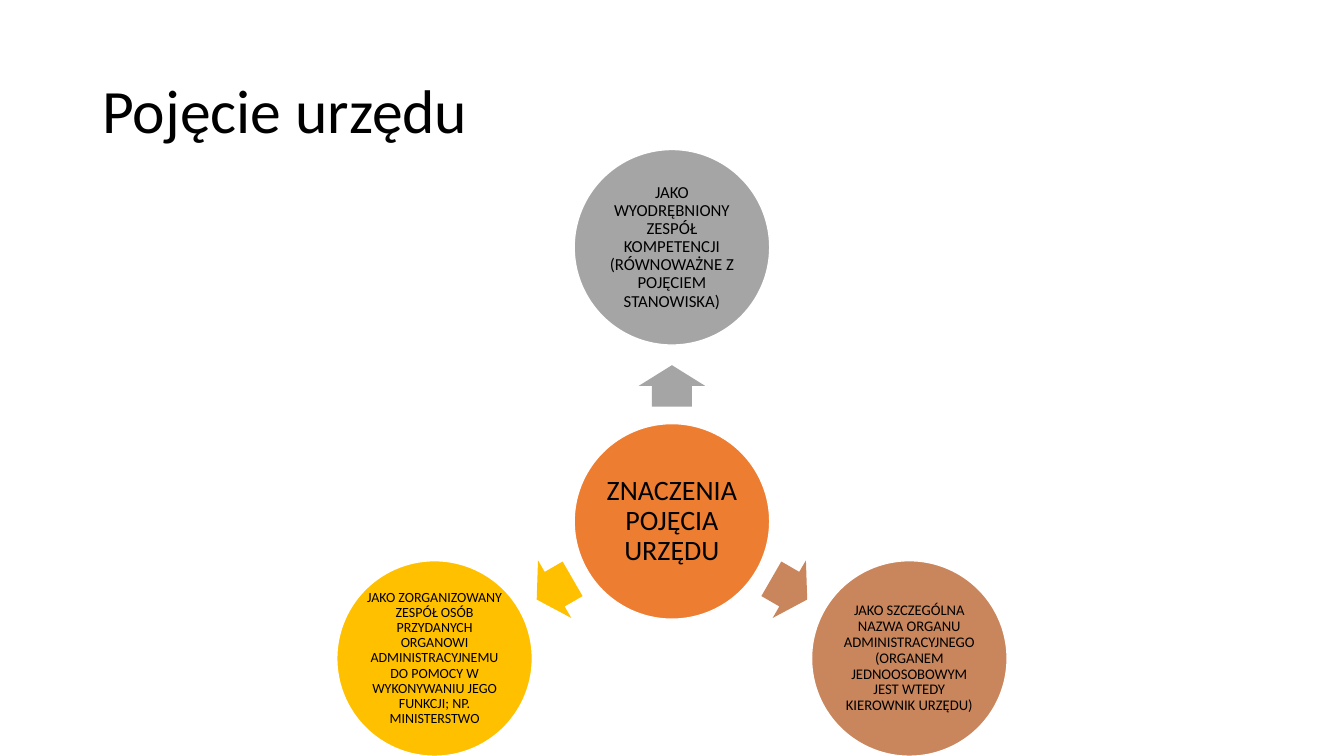
import math

from pptx import Presentation
from pptx.dml.color import RGBColor
from pptx.enum.shapes import MSO_SHAPE
from pptx.enum.text import MSO_ANCHOR, PP_ALIGN
from pptx.util import Pt

ELLIPSE = MSO_SHAPE.OVAL
ARROW = MSO_SHAPE.RIGHT_ARROW
MIDDLE = MSO_ANCHOR.MIDDLE
LEFT = PP_ALIGN.LEFT
CENTER = PP_ALIGN.CENTER

BLACK = RGBColor(0x00, 0x00, 0x00)
WHITE = RGBColor(0xFF, 0xFF, 0xFF)
ORANGE = RGBColor(0xED, 0x7D, 0x31)
GRAY = RGBColor(0xA5, 0xA5, 0xA5)
BROWN = RGBColor(0xC9, 0x85, 0x5C)
YELLOW = RGBColor(0xFF, 0xC0, 0x00)

FONT = "Calibri"
DIAMETER = 139.7
ORBIT = 195.8
ARROW_DISTANCE = 96.8
ARROW_LENGTH = 29.6
ARROW_WIDTH = 47.5

MEANINGS = [
    (-90, GRAY, 12, 1.5,
     "JAKO WYODRĘBNIONY ZESPÓŁ KOMPETENCJI (RÓWNOWAŻNE Z POJĘCIEM STANOWISKA)"),
    (30, BROWN, 10.5, 1.3,
     "JAKO SZCZEGÓLNA NAZWA ORGANU ADMINISTRACYJNEGO "
     "(ORGANEM JEDNOOSOBOWYM JEST WTEDY KIEROWNIK URZĘDU)"),
    (150, YELLOW, 10, 1,
     "JAKO ZORGANIZOWANY ZESPÓŁ OSÓB PRZYDANYCH ORGANOWI ADMINISTRACYJNEMU "
     "DO POMOCY W WYKONYWANIU JEGO FUNKCJI; NP. MINISTERSTWO"),
]


def write_text(shape, text, size, alignment):
    text_frame = shape.text_frame
    text_frame.word_wrap = True
    text_frame.vertical_anchor = MIDDLE
    text_frame.text = text
    paragraph = text_frame.paragraphs[0]
    paragraph.alignment = alignment
    paragraph.line_spacing = 0.9
    font = paragraph.runs[0].font
    font.name = FONT
    font.size = Pt(size)
    font.color.rgb = BLACK


def add_centered_shape(slide, kind, x, y, width, height, color):
    shape = slide.shapes.add_shape(
        kind, Pt(x - width / 2), Pt(y - height / 2), Pt(width), Pt(height))
    shape.shadow.inherit = False
    shape.fill.solid()
    shape.fill.fore_color.rgb = color
    shape.line.fill.background()
    return shape


def add_circle(slide, x, y, color, text, size, inset):
    circle = add_centered_shape(slide, ELLIPSE, x, y, DIAMETER, DIAMETER, color)
    circle.line.color.rgb = WHITE
    circle.line.width = Pt(1)
    text_frame = circle.text_frame
    text_frame.margin_left = text_frame.margin_right = Pt(inset)
    text_frame.margin_top = text_frame.margin_bottom = Pt(inset)
    write_text(circle, text, size, CENTER)


def add_arrow(slide, x, y, angle, color):
    arrow = add_centered_shape(slide, ARROW, x, y, ARROW_LENGTH, ARROW_WIDTH, color)
    arrow.adjustments[0] = 0.6
    arrow.adjustments[1] = 0.5
    arrow.rotation = angle % 360


def add_title(slide, left, top, width, height):
    title = slide.shapes.add_textbox(Pt(left), Pt(top), Pt(width), Pt(height))
    write_text(title, "Pojęcie urzędu", 44, LEFT)


def add_radial_diagram(slide, left, top, width):
    center_x = left + width / 2
    center_y = top + DIAMETER / 2 + ORBIT
    add_circle(slide, center_x, center_y, ORANGE, "ZNACZENIA POJĘCIA URZĘDU", 20, 2)
    for angle, color, size, inset, text in MEANINGS:
        cosine = math.cos(math.radians(angle))
        sine = math.sin(math.radians(angle))
        add_arrow(slide, center_x + ARROW_DISTANCE * cosine,
                  center_y + ARROW_DISTANCE * sine, angle, color)
        add_circle(slide, center_x + ORBIT * cosine, center_y + ORBIT * sine,
                   color, text, size, inset)


def main():
    presentation = Presentation()
    presentation.slide_width = Pt(960)
    presentation.slide_height = Pt(540)
    slide = presentation.slides.add_slide(presentation.slide_layouts[6])
    add_title(slide, 66, 28.8, 828, 104.4)
    add_radial_diagram(slide, 240, 106.8, 480)
    presentation.save("out.pptx")


if __name__ == "__main__":
    main()
